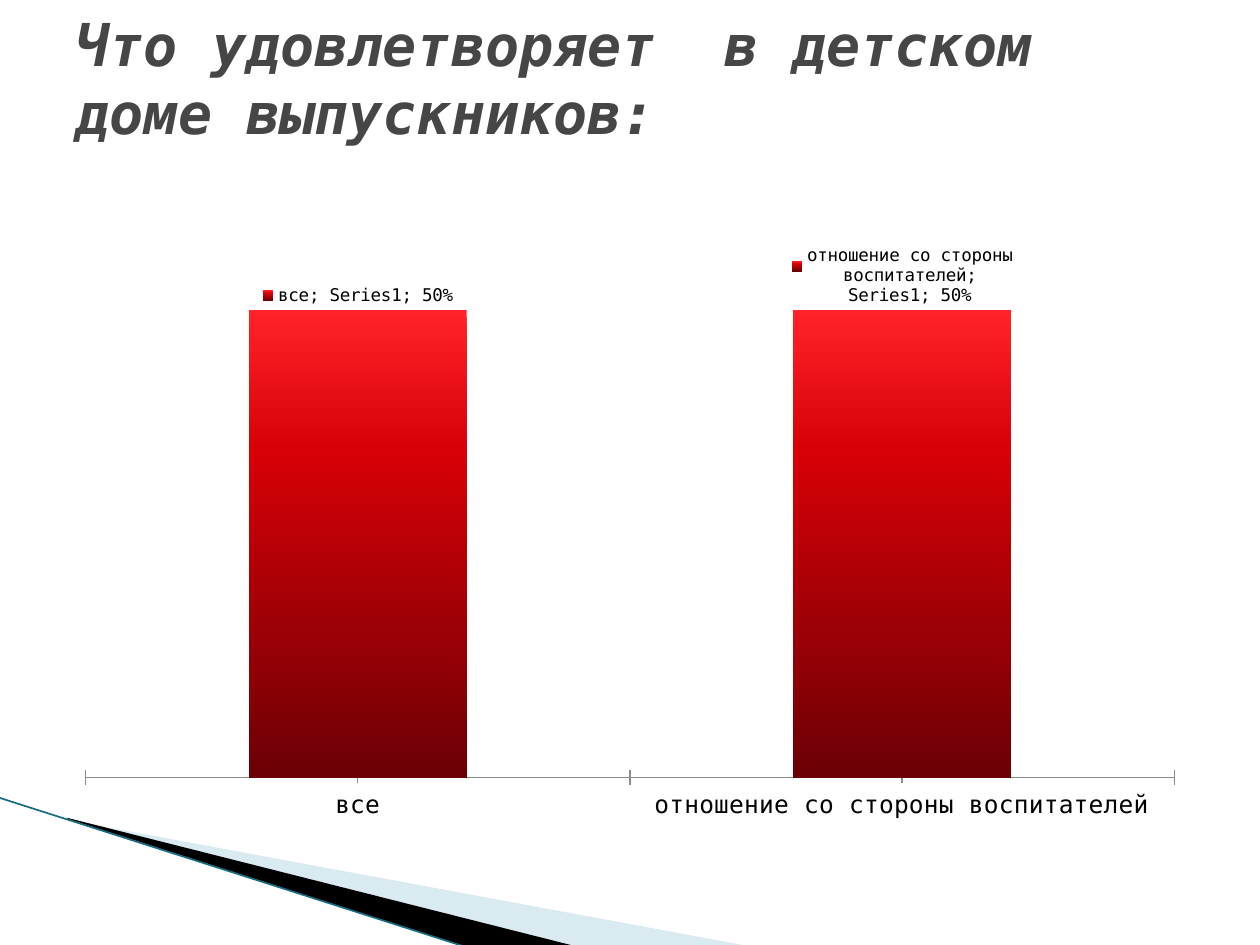
from lxml import etree
from pptx import Presentation
from pptx.chart.data import CategoryChartData
from pptx.dml.color import RGBColor
from pptx.enum import chart as ch, shapes, text
from pptx.oxml import parse_xml
from pptx.oxml.ns import nsdecls, qn
from pptx.util import Inches, Pt

FONT = "DejaVu Sans Mono"
BLACK = RGBColor(0x00, 0x00, 0x00)
TITLE_GREY = RGBColor(0x46, 0x46, 0x46)
AXIS_GREY = RGBColor(0x8B, 0x8B, 0x8B)
PALE_BLUE = RGBColor(0xA0, 0xCB, 0xDC)
TEAL = RGBColor(0x16, 0x6B, 0x80)
BAR_STOPS = [
    (0, RGBColor(0xFF, 0x22, 0x29)),
    (30, RGBColor(0xD8, 0x00, 0x07)),
    (100, RGBColor(0x6A, 0x00, 0x05)),
]


def set_frame(sp, frame):
    """Give a freeform another frame while its outline stays in place."""
    left, top, width, height = (Inches(v) for v in frame)
    dx, dy = sp.left - left, sp.top - top
    outline = sp._element.spPr.find(".//" + qn("a:path"))
    outline.set("w", str(width))
    outline.set("h", str(height))
    for pt in outline.iter(qn("a:pt")):
        pt.set("x", str(int(pt.get("x")) + dx))
        pt.set("y", str(int(pt.get("y")) + dy))
    sp.left, sp.top, sp.width, sp.height = left, top, width, height


def add_wedge(s, frame, points, color, alpha=100):
    """Filled polygon; frame and points in inches, alpha as percent opacity."""
    start, *rest = [(Inches(x), Inches(y)) for x, y in points]
    fb = s.shapes.build_freeform(*start)
    fb.add_line_segments(rest, close=True)
    sp = fb.convert_to_shape()
    set_frame(sp, frame)
    sp.shadow.inherit = False
    sp.line.fill.background()
    sp.fill.solid()
    sp.fill.fore_color.rgb = color
    if alpha < 100:
        clr = sp.fill._xPr.find(".//" + qn("a:srgbClr"))
        etree.SubElement(clr, qn("a:alpha")).set("val", str(alpha * 1000))


def add_edge_line(s, start, end):
    ends = [Inches(v) for v in (*start, *end)]
    line = s.shapes.add_connector(shapes.MSO_CONNECTOR.STRAIGHT, *ends)
    line.line.color.rgb = TEAL
    line.line.width = Pt(0.95)
    etree.SubElement(line._element.spPr, qn("a:effectLst"))


def set_title(s, wording):
    title = s.shapes.title
    title.left, title.top = Inches(0.5), Inches(0.3)
    title.width, title.height = Inches(9), Inches(1.25)
    tf = title.text_frame
    tf.word_wrap = True
    tf.auto_size = text.MSO_AUTO_SIZE.NONE
    tf.vertical_anchor = text.MSO_ANCHOR.MIDDLE
    tf.margin_bottom = Inches(0.67)
    tf.text = wording
    p = tf.paragraphs[0]
    p.alignment = text.PP_ALIGN.LEFT
    p.font.name, p.font.size = FONT, Pt(32.4)
    p.font.bold = p.font.italic = True
    p.font.color.rgb = TITLE_GREY


def fill_gradient(series):
    """Vertical gradient through BAR_STOPS, top to bottom."""
    stops = "".join(
        f'<a:gs pos="{pos * 1000}"><a:srgbClr val="{color}"/></a:gs>'
        for pos, color in BAR_STOPS)
    sp_pr = series._element.get_or_add_spPr()
    sp_pr.insert(0, parse_xml(
        f'<a:gradFill {nsdecls("a")} rotWithShape="1"><a:gsLst>{stops}</a:gsLst>'
        '<a:lin ang="5400000" scaled="0"/></a:gradFill>'))


def set_plot_area(chart, x, y, w, h):
    """Place the inner plot area, as fractions of the chart."""
    area = chart._chartSpace.chart.plotArea
    for old in area.findall(qn("c:layout")):
        area.remove(old)
    sizes = "".join(f'<c:{k} val="{v}"/>' for k, v in zip("xywh", (x, y, w, h)))
    area.insert(0, parse_xml(
        f'<c:layout {nsdecls("c")}><c:manualLayout><c:layoutTarget val="inner"/>'
        f'<c:xMode val="edge"/><c:yMode val="edge"/>{sizes}'
        '</c:manualLayout></c:layout>'))


def format_labels(plot):
    plot.has_data_labels = True
    labels = plot.data_labels
    labels.show_value = labels.show_category_name = True
    labels.show_series_name = labels.show_legend_key = True
    labels.number_format, labels.number_format_is_linked = "0%", False
    labels.position = ch.XL_LABEL_POSITION.OUTSIDE_END
    labels.font.name, labels.font.size = FONT, Pt(10)
    labels.font.color.rgb = BLACK
    labels._element.find(".//" + qn("a:bodyPr")).set("wrap", "square")
    separator = parse_xml(f'<c:separator {nsdecls("c")}>; </c:separator>')
    labels._element.find(qn("c:showBubbleSize")).addnext(separator)


def add_bar_chart(s, values):
    data = CategoryChartData(number_format="0%")
    data.categories = list(values)
    data.add_series("Series1", list(values.values()))
    chart = s.shapes.add_chart(
        ch.XL_CHART_TYPE.COLUMN_CLUSTERED, Inches(0.5), Inches(1.62),
        Inches(9), Inches(4.95), data).chart
    chart.has_legend = chart.has_title = False
    chart.font.name, chart.font.size = FONT, Pt(10)
    chart.font.color.rgb = BLACK
    set_plot_area(chart, 0.02, 0.02, 0.96, 0.9)

    plot = chart.plots[0]
    plot.gap_width = 150
    plot.vary_by_categories = False
    fill_gradient(plot.series[0])
    format_labels(plot)

    axis = chart.value_axis
    axis.minimum_scale, axis.maximum_scale = 0, 0.6
    axis.has_major_gridlines = False
    axis.visible = False

    axis = chart.category_axis
    axis.major_tick_mark = ch.XL_TICK_MARK.CROSS
    axis.minor_tick_mark = ch.XL_TICK_MARK.OUTSIDE
    axis.format.line.color.rgb = AXIS_GREY
    axis.format.line.width = Pt(0.75)
    axis.tick_labels.font.name = FONT
    axis.tick_labels.font.size = Pt(14)
    axis.tick_labels.font.color.rgb = BLACK


def main():
    prs = Presentation()
    prs.slide_width, prs.slide_height = Inches(10), Inches(7.5)
    s = prs.slides.add_slide(prs.slide_layouts[5])
    add_wedge(s, (0.78, 5.47, 4.16, 1.58),
              [(0.55, 6.51), (5.95, 7.51), (4.56, 7.51), (0.55, 6.5)],
              PALE_BLUE, 40)
    add_wedge(s, (-0.06, 6.33, 4.16, 0.92),
              [(0.53, 6.49), (4.57, 7.51), (3.72, 7.52), (0.54, 6.5)], BLACK)
    add_edge_line(s, (-0.01, 6.33), (3.71, 7.52))
    add_bar_chart(s, {"все": 0.5, "отношение со стороны воспитателей": 0.5})
    set_title(s, "Что удовлетворяет  в детском доме выпускников:")
    prs.save("out.pptx")


if __name__ == "__main__":
    main()
